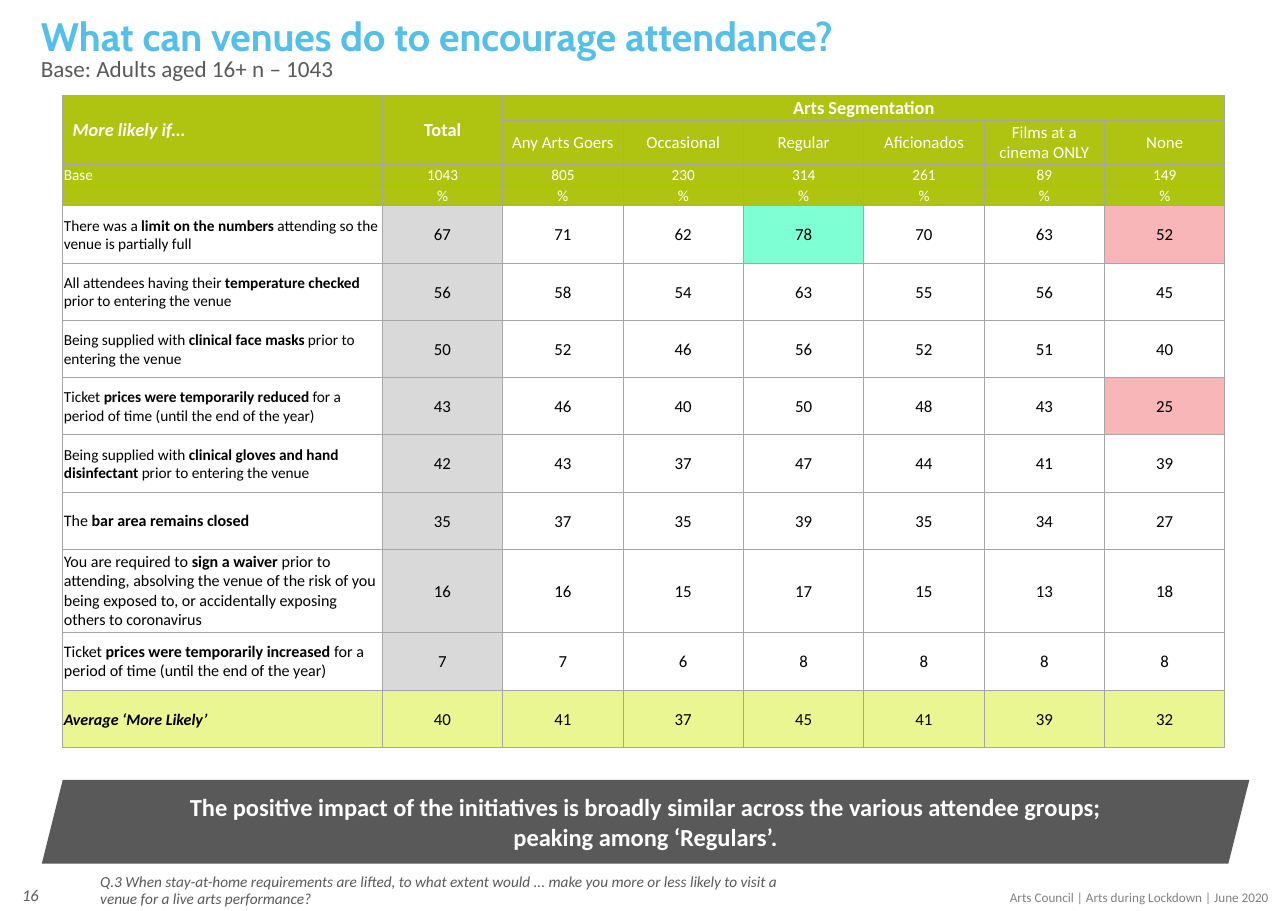
from dataclasses import dataclass

from lxml import etree
from pptx import Presentation
from pptx import util as u
from pptx.dml.color import RGBColor
from pptx.enum import shapes, text
from pptx.oxml.ns import qn

LEFT, MID, RIGHT = text.PP_ALIGN.LEFT, text.PP_ALIGN.CENTER, text.PP_ALIGN.RIGHT
TOP, CENTRE = text.MSO_ANCHOR.TOP, text.MSO_ANCHOR.MIDDLE


@dataclass(frozen=True)
class Theme:
    head: str = "Cabin"
    body: str = "Calibri"
    sky: str = "54C0E8"
    dark: str = "595959"
    grey: str = "808080"
    line: str = "A6A6A6"
    green: str = "AEC411"
    lime: str = "E9F692"
    total: str = "D9D9D9"
    high: str = "7FFFD4"
    low: str = "F8B6B8"
    white: str = "FFFFFF"
    black: str = "000000"
    title: float = 25.9
    base: float = 15.1
    banner: float = 16
    group: float = 12
    value: float = 11
    page: float = 10.8
    label: float = 10.5
    small: float = 10
    foot: float = 8.6


T = Theme()

# Table content
GROUPS = ["Any Arts Goers", "Occasional", "Regular", "Aficionados",
          "Films at a cinema ONLY", "None"]
BASES = [1043, 805, 230, 314, 261, 89, 149]
# Each row: plain, bold and plain label parts, label size, values
ROWS = [
    (("There was a ", "limit on the numbers ", "attending so the venue is partially full"),
     T.small, [67, 71, 62, 78, 70, 63, 52]),
    (("All attendees having their ", "temperature checked ", "prior to entering the venue"),
     T.small, [56, 58, 54, 63, 55, 56, 45]),
    (("Being supplied with ", "clinical face masks ", "prior to entering the venue"),
     T.small, [50, 52, 46, 56, 52, 51, 40]),
    (("Ticket ", "prices were temporarily reduced ",
      "for a period of time (until the end of the year)"),
     T.small, [43, 46, 40, 50, 48, 43, 25]),
    (("Being supplied with ", "clinical gloves and hand disinfectant ",
      "prior to entering the venue"),
     T.small, [42, 43, 37, 47, 44, 41, 39]),
    (("The ", "bar area remains closed"), T.label, [35, 37, 35, 39, 35, 34, 27]),
    (("You are required to ", "sign a waiver ",
      "prior to attending, absolving the venue of the risk of you being exposed to, "
      "or accidentally exposing others to coronavirus"),
     T.label, [16, 16, 15, 17, 15, 13, 18]),
    (("Ticket ", "prices were temporarily increased ",
      "for a period of time (until the end of the year)"),
     T.label, [7, 7, 6, 8, 8, 8, 8]),
]
MEANS = [40, 41, 37, 45, 41, 39, 32]
MARKS = {(0, 3): T.high, (0, 6): T.low, (3, 6): T.low}
HEIGHTS = [0.22, 0.4, 0.19, 0.19] + [0.52] * 6 + [0.75, 0.53, 0.52]


def write(para, words, size, color, bold=False, italic=False, align=LEFT, font=T.body):
    para.alignment = align
    run = para.add_run()
    run.text = words
    run.font.name, run.font.size = font, u.Pt(size)
    run.font.bold, run.font.italic = bold, italic
    run.font.color.rgb = RGBColor.from_string(color)


def place(shape, left, top, width, height):
    shape.left, shape.top = u.Inches(left), u.Inches(top)
    shape.width, shape.height = u.Inches(width), u.Inches(height)


def holder(shape, box, words, size, color, **look):
    """Move a title or body placeholder and fill it with one plain paragraph."""
    place(shape, *box)
    frame = shape.text_frame
    frame.auto_size = text.MSO_AUTO_SIZE.NONE
    frame.vertical_anchor = TOP
    para = frame.paragraphs[0]
    props = para._p.get_or_add_pPr()
    props.set("marL", "0")
    props.set("indent", "0")
    etree.SubElement(props, qn("a:buNone"))
    para.line_spacing, para.space_before = 0.9, u.Pt(0)
    write(para, words, size, color, **look)


def label(slide, box, words, size, color, anchor=TOP, **look):
    frame = slide.shapes.add_textbox(*map(u.Inches, box)).text_frame
    frame.word_wrap = True
    frame.vertical_anchor = anchor
    write(frame.paragraphs[0], words, size, color, align=RIGHT, **look)


def banner(slide, box, words):
    shape = slide.shapes.add_shape(shapes.MSO_SHAPE.PARALLELOGRAM, *map(u.Inches, box))
    shape.shadow.inherit = False
    shape.fill.solid()
    shape.fill.fore_color.rgb = RGBColor.from_string(T.dark)
    shape.line.fill.background()
    frame = shape.text_frame
    frame.word_wrap = True
    frame.vertical_anchor = CENTRE
    frame.margin_left = frame.margin_right = frame.margin_top = frame.margin_bottom = 0
    write(frame.paragraphs[0], words, T.banner, T.white, bold=True, align=MID)


def dress(cell, fill):
    """Set the margins, borders and fill of a cell."""
    cell.margin_left = cell.margin_right = cell.margin_top = u.Inches(0.01)
    cell.margin_bottom = 0
    cell.vertical_anchor = CENTRE
    props = cell._tc.get_or_add_tcPr()
    for side in ("lnL", "lnR", "lnT", "lnB"):
        edge = etree.SubElement(props, qn(f"a:{side}"), w=str(u.Pt(0.75)))
        paint = etree.SubElement(edge, qn("a:solidFill"))
        etree.SubElement(paint, qn("a:srgbClr"), val=T.line)
    if fill:
        cell.fill.solid()
        cell.fill.fore_color.rgb = RGBColor.from_string(fill)
    else:
        cell.fill.background()


def fill_row(grid, row, items, size, color, start=1):
    for col, item in enumerate(items, start):
        write(grid.cell(row, col).text_frame.paragraphs[0], str(item), size, color, align=MID)


def shade(row, col):
    if row < 4:
        return T.green
    if row == len(HEIGHTS) - 1:
        return T.lime
    if col < 2:
        return T.total if col else None
    return MARKS.get((row - 4, col - 1), T.white)


def table(slide, left, top, width, first):
    count = len(BASES) + 1
    grid = slide.shapes.add_table(len(HEIGHTS), count, u.Inches(left), u.Inches(top),
                                  u.Inches(width), u.Inches(sum(HEIGHTS))).table
    grid.first_row = grid.horz_banding = False
    for col in range(count):
        grid.columns[col].width = u.Inches((width - first) / len(BASES) if col else first)
    for row, height in enumerate(HEIGHTS):
        grid.rows[row].height = u.Inches(height)
        for col in range(count):
            dress(grid.cell(row, col), shade(row, col))

    def para(row, col):
        return grid.cell(row, col).text_frame.paragraphs[0]

    # Header
    for start, end in (((0, 0), (1, 0)), ((0, 1), (1, 1)), ((0, 2), (0, count - 1))):
        grid.cell(*start).merge(grid.cell(*end))
    grid.cell(0, 0).margin_left = u.Inches(0.09)
    write(para(0, 0), "More likely if…", T.group, T.white, bold=True, italic=True)
    write(para(0, 1), "Total", T.group, T.white, bold=True, align=MID)
    write(para(0, 2), "Arts Segmentation", T.group, T.white, bold=True, align=MID)
    fill_row(grid, 1, GROUPS, T.value, T.white, start=2)
    write(para(2, 0), "Base", T.small, T.white)
    fill_row(grid, 2, BASES, T.small, T.white)
    etree.SubElement(para(3, 0)._p, qn("a:endParaRPr"), sz=str(int(T.small * 100)))
    fill_row(grid, 3, ["%"] * len(BASES), T.small, T.white)

    # Measures and their average
    for row, (parts, size, values) in enumerate(ROWS, 4):
        for spot, part in enumerate(parts):
            write(para(row, 0), part, size, T.black, bold=spot == 1)
        fill_row(grid, row, values, T.value, T.black)
    last = len(HEIGHTS) - 1
    write(para(last, 0), "Average ‘More Likely’", T.label, T.black, bold=True, italic=True)
    fill_row(grid, last, MEANS, T.value, T.black)


def main():
    deck = Presentation()
    deck.slide_width, deck.slide_height = u.Inches(11.69), u.Inches(8.27)
    slide = deck.slides.add_slide(deck.slide_layouts[3])
    title, base, note = slide.placeholders

    # Title, base and question
    holder(title, (0.27, 0.11, 9.38, 0.45), "What can venues do to encourage attendance?",
           T.title, T.sky, bold=True, font=T.head)
    holder(base, (0.27, 0.47, 6.55, 0.39), "Base: Adults aged 16+ n – 1043", T.base, T.dark)
    holder(note, (0.81, 7.89, 6.58, 0.34),
           "Q.3 When stay-at-home requirements are lifted, to what extent would ... "
           "make you more or less likely to visit a venue for a live arts performance?",
           T.small, T.dark, italic=True)

    # Results and finding
    table(slide, 0.57, 0.87, 10.55, 2.9)
    banner(slide, (0.38, 7.08, 10.96, 0.76),
           "The positive impact of the initiatives is broadly similar across the various "
           "attendee groups; peaking among ‘Regulars’.")

    # Footer
    label(slide, (7.71, 8.02, 3.91, 0.25), "Arts Council | Arts during Lockdown | June 2020",
          T.foot, T.grey)
    label(slide, (0, 7.9, 0.45, 0.44), "16", T.page, T.dark, anchor=CENTRE, italic=True)
    deck.save("out.pptx")


if __name__ == "__main__":
    main()
